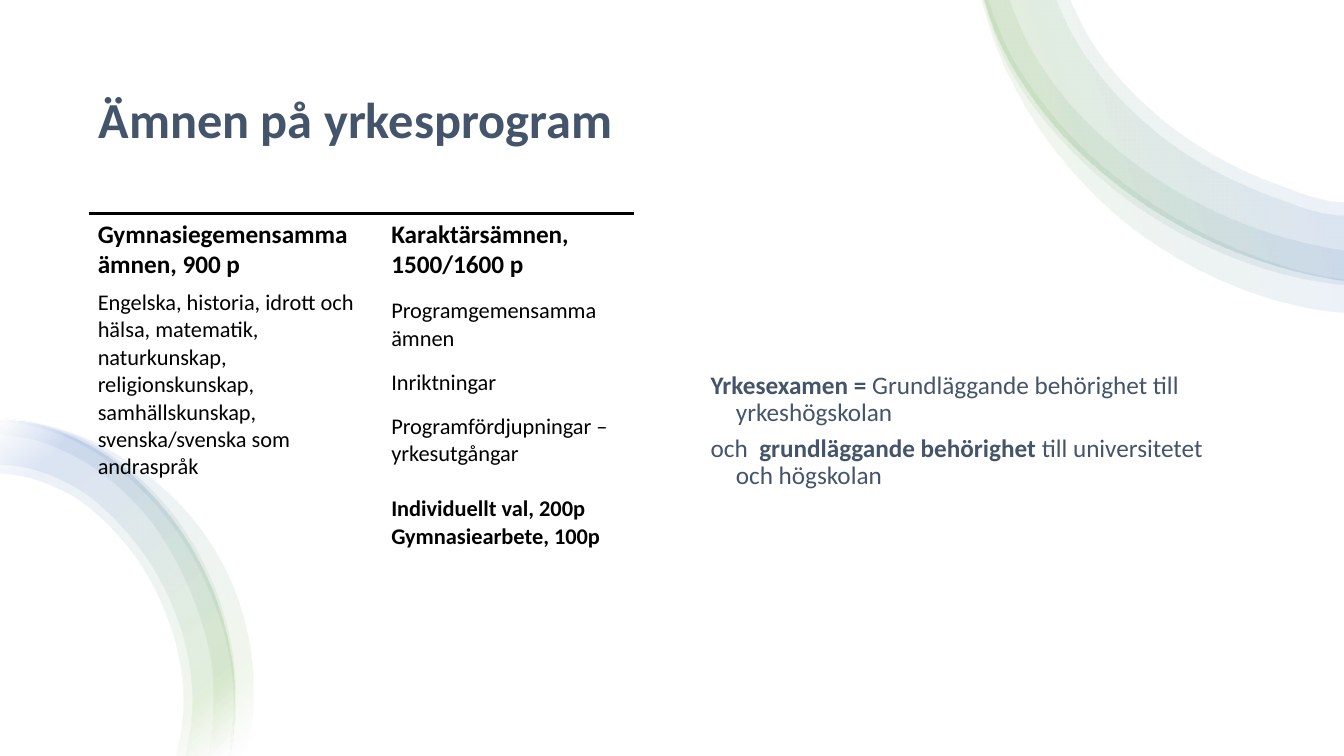
import math

import pptx
import pptx.dml.color
import pptx.enum.shapes
import pptx.enum.text
import pptx.oxml
import pptx.oxml.ns
import pptx.util

SLATE = pptx.dml.color.RGBColor(0x44, 0x54, 0x6A)
BLACK = pptx.dml.color.RGBColor(0, 0, 0)
WHITE = pptx.dml.color.RGBColor(255, 255, 255)
GREEN = pptx.dml.color.RGBColor(0x70, 0xAD, 0x47)
BLUE = pptx.dml.color.RGBColor(0x44, 0x72, 0xC4)
FONT = "Calibri"
WIDTH, HEIGHT = pptx.util.Inches(13.33), pptx.util.Inches(7.5)
NO_STYLE = "{2D5ABB26-0587-4C30-8999-92F81FD0307C}"
BAND_STOPS = [(2, WHITE), (16, GREEN), (85, BLUE), (100, WHITE)]
DRAWING_NS = pptx.oxml.ns.nsdecls("a")

# Each band of an arc: the knots of its outer edge, then of its inner edge, in inches
LEFT_RIM = [(0, 4.17), (0.19, 4.18), (1.02, 4.5), (1.7, 5.15), (2.16, 6.02), (2.32, 6.99), (2.27, 7.5)]
LEFT_BANDS = [
    (LEFT_RIM, [(1.74, 7.5), (1.81, 6.99), (1.66, 6.15), (1.24, 5.4), (0.64, 4.88), (0.12, 4.71), (0, 4.7)]),
    (LEFT_RIM, [(1.83, 7.5), (1.9, 6.99), (1.74, 6.11), (1.3, 5.34), (0.68, 4.8), (0.13, 4.62), (0, 4.61)]),
    ([(0, 4.17), (0.4, 4.21), (0.83, 4.36), (1.56, 4.92), (2.07, 5.7), (2.32, 6.62), (2.33, 7.1), (2.28, 7.5)],
     [(2.06, 7.5), (2.11, 7.09), (2.1, 6.65), (1.86, 5.81), (1.41, 5.07), (0.75, 4.53), (0.36, 4.37), (0, 4.31)]),
    ([(0, 4.15), (0.13, 4.16), (0.81, 4.33), (1.23, 4.55), (1.79, 5.01), (2.22, 5.62), (2.5, 6.6), (2.5, 7.11), (2.42, 7.5)],
     [(2.26, 7.5), (2.31, 7.09), (2.29, 6.62), (2.11, 5.95), (1.79, 5.33), (1.5, 4.96), (0.98, 4.51), (0.57, 4.3), (0.12, 4.19), (0, 4.18)]),
]
RIGHT_RIM = [(9.77, 0), (9.85, 0.25), (10.38, 1.15), (11.16, 1.89), (12.12, 2.44), (13.2, 2.76), (13.33, 2.78)]
RIGHT_BANDS = [
    ([(9.74, 0.01), (9.91, 0.53), (10.24, 1.17), (10.69, 1.76), (11.24, 2.27), (11.88, 2.67), (12.96, 3.05), (13.33, 3.1)],
     [(13.33, 2.77), (13.04, 2.72), (12.37, 2.51), (11.43, 2.02), (10.87, 1.59), (10.39, 1.08), (10, 0.49), (9.81, 0.01)]),
    (RIGHT_RIM, [(13.33, 2), (13.3, 2), (12.67, 1.83), (11.53, 1.19), (10.75, 0.28), (10.62, 0)]),
    ([(9.76, 0.01), (9.96, 0.57), (10.81, 1.67), (11.37, 2.11), (11.99, 2.45), (13.03, 2.78), (13.33, 2.82)],
     [(13.33, 2.48), (13.1, 2.44), (12.15, 2.14), (11.03, 1.44), (10.57, 0.98), (10.21, 0.45), (10.02, 0.01)]),
    (RIGHT_RIM, [(13.33, 2.13), (13.28, 2.13), (12.62, 1.95), (11.44, 1.29), (10.63, 0.33), (10.48, 0.01)]),
]

# Table cells: each paragraph is its lines, size, bold and space before
SUBJECT_CELLS = [
    [(["Gymnasiegemensamma ", "ämnen, 900 p"], 18, True, 0),
     (["Engelska, historia, idrott och hälsa, matematik, naturkunskap, religionskunskap, "
       "samhällskunskap, svenska/svenska som andraspråk"], 16, False, 6)],
    [(["Karaktärsämnen,"], 18, True, 0),
     (["1500/1600 p"], 18, True, 0),
     (["Programgemensamma ämnen"], 16, False, 12),
     (["Inriktningar"], 16, False, 12),
     (["Programfördjupningar – yrkesutgångar"], 16, False, 12),
     (["Individuellt val, 200p"], 16, True, 19.5),
     (["Gymnasiearbete, 100p"], 16, True, 0)],
]
DIPLOMA_PARAS = [
    [("Yrkesexamen = ", True), ("Grundläggande behörighet till yrkeshögskolan", False)],
    [("och  ", False), ("grundläggande behörighet ", True), ("till universitetet och högskolan", False)],
]


def set_all(target, values):
    for name, value in values.items():
        setattr(target, name, value)


def share(left, top, width, height):
    """Turn percentages of the slide into a box."""
    return (int(WIDTH * left / 100), int(HEIGHT * top / 100),
            int(WIDTH * width / 100), int(HEIGHT * height / 100))


def add_span(para, text, size, bold, color):
    span = para.add_run()
    span.text = text
    set_all(span.font, {"name": FONT, "size": pptx.util.Pt(size), "bold": bold})
    span.font.color.rgb = color


def add_text_frame(page, box):
    frame = page.shapes.add_textbox(*box).text_frame
    set_all(frame, {"word_wrap": True, "vertical_anchor": pptx.enum.text.MSO_ANCHOR.MIDDLE})
    return frame


def bend(segments):
    """Turn the straight segments of one edge into a smooth curve."""
    knots = [complex(int(s[0].get("x")), int(s[0].get("y"))) for s in segments]
    lengths = [abs(b - a) for a, b in zip(knots, knots[1:])]
    slopes = [(b - a) / length for a, b, length in zip(knots, knots[1:], lengths)]
    inner = [(s * k + t * h) / (h + k) for s, t, h, k in zip(slopes, slopes[1:], lengths, lengths[1:])]
    tangents = [1.5 * slopes[0] - inner[0] / 2, *inner, 1.5 * slopes[-1] - inner[-1] / 2]
    for index, length in enumerate(lengths):
        controls = (knots[index] + tangents[index] * length / 3,
                    knots[index + 1] - tangents[index + 1] * length / 3, knots[index + 1])
        marks = "".join(f'<a:pt x="{round(p.real)}" y="{round(p.imag)}"/>' for p in controls)
        old = segments[index + 1]
        old.getparent().replace(old, pptx.oxml.parse_xml(
            f"<a:cubicBezTo {DRAWING_NS}>{marks}</a:cubicBezTo>"))


def add_arc(page, bands, angle, turned=False):
    for outer, inner in bands:
        points = outer + inner
        if turned:
            mid_x, mid_y = (math.fsum((min(axis), max(axis))) / 2 for axis in zip(*points))
            points = [(mid_x - (y - mid_y), mid_y + (x - mid_x)) for x, y in points]
        points = [(pptx.util.Inches(x), pptx.util.Inches(y)) for x, y in points]
        builder = page.shapes.build_freeform(*points[0])
        builder.add_line_segments(points[1:], close=True)
        band = builder.convert_to_shape()
        band.rotation = 270 if turned else 0
        band.shadow.inherit = False
        band.line.fill.background()
        outline = band._element.spPr.find(pptx.oxml.ns.qn("a:custGeom"))
        segments = [pt.getparent() for pt in outline.iter(pptx.oxml.ns.qn("a:pt"))]
        bend(segments[:len(outer)])
        bend(segments[len(outer):])
        stops = "".join(
            f'<a:gs pos="{place * 1000}"><a:srgbClr val="{color}"><a:alpha val="10000"/></a:srgbClr></a:gs>'
            for place, color in BAND_STOPS)
        outline.addnext(pptx.oxml.parse_xml(
            f'<a:gradFill {DRAWING_NS} rotWithShape="1"><a:gsLst>{stops}</a:gsLst>'
            f'<a:lin ang="{angle * 60000}" scaled="0"/></a:gradFill>'))


def add_backdrop(page, box):
    backdrop = page.shapes.add_shape(pptx.enum.shapes.MSO_SHAPE.RECTANGLE, *box)
    backdrop.shadow.inherit = False
    backdrop.fill.solid()
    backdrop.fill.fore_color.rgb = WHITE
    backdrop.line.fill.background()


def add_title(page, box):
    para = add_text_frame(page, box).paragraphs[0]
    para.line_spacing = 0.9
    add_span(para, "Ämnen på yrkesprogram", 36, True, SLATE)


def add_diploma_note(page, box):
    frame = add_text_frame(page, box)
    frame.margin_bottom = box[3] * 34 // 100
    indent = pptx.util.Inches(0.25)
    for index, spans in enumerate(DIPLOMA_PARAS):
        para = frame.add_paragraph() if index else frame.paragraphs[0]
        set_all(para, {"line_spacing": 0.9, "space_before": pptx.util.Pt(6 * index)})
        para._p.get_or_add_pPr().set("marL", str(indent))
        para._p.get_or_add_pPr().set("indent", str(-indent))
        for text, bold in spans:
            add_span(para, text, 18, bold, SLATE)


def add_subject_table(page, box):
    table = page.shapes.add_table(2, 2, *box).table
    set_all(table, {"first_row": False, "horz_banding": False})
    table._tbl.tblPr.find(pptx.oxml.ns.qn("a:tableStyleId")).text = NO_STYLE
    for column, part in zip(table.columns, (2.91, 2.5)):
        column.width = int(box[2] * part / 5.41)
    for row, part in zip(table.rows, (0.87, 0.13)):
        row.height = int(box[3] * part)
    side, edge = pptx.util.Inches(0.09), pptx.util.Inches(0.06)
    for cell in table.iter_cells():
        set_all(cell, {"margin_left": side, "margin_right": side, "margin_top": edge, "margin_bottom": edge})
        cell.fill.background()
    for cell, paragraphs in zip(table.rows[0].cells, SUBJECT_CELLS):
        # Rule above the column
        cell._tc.get_or_add_tcPr().insert(0, pptx.oxml.parse_xml(
            f'<a:lnT {DRAWING_NS} w="{pptx.util.Pt(2.25)}"><a:solidFill>'
            f'<a:srgbClr val="{BLACK}"/></a:solidFill></a:lnT>'))
        for index, (lines, size, bold, before) in enumerate(paragraphs):
            para = cell.text_frame.add_paragraph() if index else cell.text_frame.paragraphs[0]
            para.space_before = pptx.util.Pt(before)
            for number, line in enumerate(lines):
                if number:
                    para.add_line_break()
                add_span(para, line, size, bold, BLACK)


def main():
    deck = pptx.Presentation()
    set_all(deck, {"slide_width": WIDTH, "slide_height": HEIGHT})
    page = deck.slides.add_slide(deck.slide_layouts[6])
    add_backdrop(page, share(0, 0, 100, 100))
    add_title(page, share(6.6, 6.67, 86.8, 18.93))
    add_diploma_note(page, share(52.14, 41.2, 41.26, 47.07))
    add_arc(page, LEFT_BANDS, 320, turned=True)
    add_arc(page, RIGHT_BANDS, 340)
    add_subject_table(page, share(6.6, 28.2, 40.6, 43.6))
    deck.save("out.pptx")


if __name__ == "__main__":
    main()
